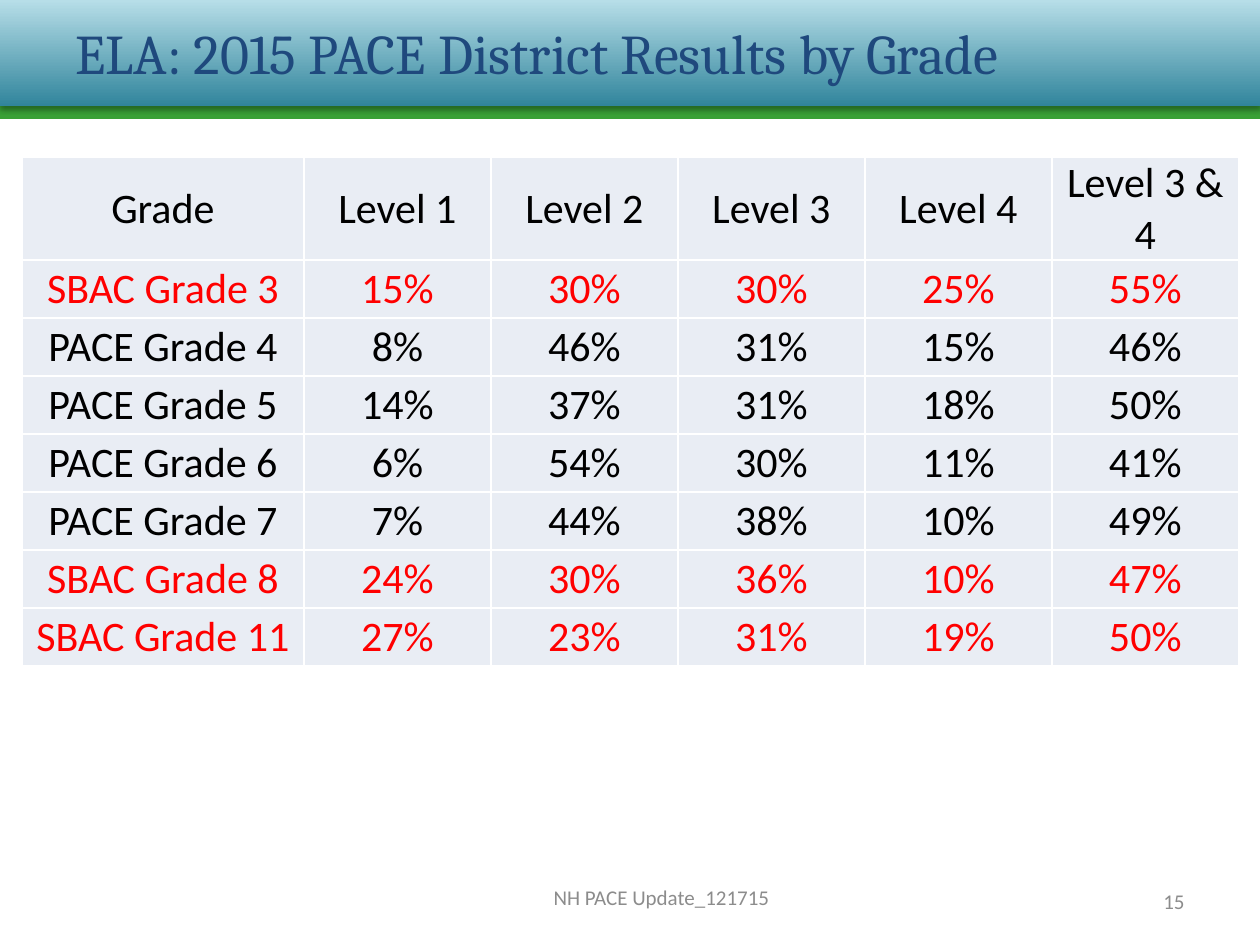
from lxml import etree
from pptx import Presentation
from pptx.dml.color import RGBColor
from pptx.enum.shapes import MSO_SHAPE
from pptx.enum.text import MSO_ANCHOR, PP_ALIGN
from pptx.oxml import parse_xml
from pptx.oxml.ns import nsdecls, qn
from pptx.util import Emu, Pt

RECTANGLE = MSO_SHAPE.RECTANGLE
MIDDLE = MSO_ANCHOR.MIDDLE
LEFT, CENTER, RIGHT = PP_ALIGN.LEFT, PP_ALIGN.CENTER, PP_ALIGN.RIGHT

GREEN = RGBColor(0x39, 0xA0, 0x36)
TEAL = RGBColor(0x31, 0x85, 0x9C)
PALE_TEAL = RGBColor(0xB7, 0xDE, 0xE8)
NAVY = RGBColor(0x1F, 0x49, 0x7D)
GREY = RGBColor(0x8C, 0x8C, 0x8C)
BLACK = RGBColor(0, 0, 0)
RED = RGBColor(0xFF, 0, 0)
WHITE = RGBColor(0xFF, 0xFF, 0xFF)
CELL_FILL = RGBColor(0xE9, 0xED, 0xF4)

TITLE = "ELA: 2015 PACE District Results by Grade"
FOOTER = "NH PACE Update_121715"
PAGE_NUMBER = "15"
HEADINGS = ("Grade", "Level 1", "Level 2", "Level 3", "Level 4", "Level 3 & 4")
RESULTS = [
    ("SBAC Grade 3", 15, 30, 30, 25, 55),
    ("PACE Grade 4", 8, 46, 31, 15, 46),
    ("PACE Grade 5", 14, 37, 31, 18, 50),
    ("PACE Grade 6", 6, 54, 30, 11, 41),
    ("PACE Grade 7", 7, 44, 38, 10, 49),
    ("SBAC Grade 8", 24, 30, 36, 10, 47),
    ("SBAC Grade 11", 27, 23, 31, 19, 50),
]

SLIDE_WIDTH, SLIDE_HEIGHT = 1260, 945
TABLE_LEFT, TABLE_TOP = 22, 157
GRADE_WIDTH, LEVEL_WIDTH = 282, 187
HEADING_HEIGHT, RESULT_HEIGHT = 103, 58


def px(count):
    return Emu(count * 7257)


def write(frame, text, size=24, font="Calibri", color=BLACK, align=CENTER):
    paragraph = frame.paragraphs[0]
    paragraph.alignment = align
    run = paragraph.add_run()
    run.text = text
    run.font.size = Pt(size)
    run.font.name = font
    run.font.color.rgb = color


def add_text(slide, box, text, **text_format):
    frame = slide.shapes.add_textbox(*map(px, box)).text_frame
    frame.word_wrap = True
    frame.vertical_anchor = MIDDLE
    write(frame, text, **text_format)


def add_band(slide, top, height):
    band = slide.shapes.add_shape(RECTANGLE, 0, px(top), px(SLIDE_WIDTH), px(height))
    band.shadow.inherit = False
    band.line.fill.background()
    return band


def add_header(slide):
    stripe = add_band(slide, 93, 26)
    stripe.fill.solid()
    stripe.fill.fore_color.rgb = GREEN

    banner = add_band(slide, 0, 106)
    banner.fill.gradient()
    banner.fill.gradient_angle = 90
    for stop, color in zip(banner.fill.gradient_stops, (TEAL, PALE_TEAL)):
        stop.color.rgb = color
    effects = banner._element.spPr.find(qn("a:effectLst"))
    shadow = etree.SubElement(effects, qn("a:outerShdw"), blurRad=str(Pt(3.1)),
                              dist=str(Pt(1.8)), dir="5400000", rotWithShape="0")
    shadow_color = etree.SubElement(shadow, qn("a:srgbClr"), val=str(BLACK))
    etree.SubElement(shadow_color, qn("a:alpha"), val="35000")


def format_cell(cell):
    cell.vertical_anchor = MIDDLE
    cell.margin_left = cell.margin_right = cell.margin_top = px(1)
    cell.margin_bottom = 0
    cell.fill.solid()
    cell.fill.fore_color.rgb = CELL_FILL
    properties = cell._tc.get_or_add_tcPr()
    for position, side in enumerate(("lnL", "lnR", "lnT", "lnB")):
        properties.insert(position, parse_xml(
            f'<a:{side} {nsdecls("a")} w="{Pt(1)}"><a:solidFill>'
            f'<a:srgbClr val="{WHITE}"/></a:solidFill></a:{side}>'))


def add_results(slide):
    rows = [HEADINGS] + [(grade, *(f"{share}%" for share in shares))
                         for grade, *shares in RESULTS]
    widths = [GRADE_WIDTH] + [LEVEL_WIDTH] * (len(HEADINGS) - 1)
    heights = [HEADING_HEIGHT] + [RESULT_HEIGHT] * len(RESULTS)
    box = (TABLE_LEFT, TABLE_TOP, sum(widths), sum(heights))
    table = slide.shapes.add_table(len(rows), len(widths), *map(px, box)).table
    table.first_row = table.horz_banding = False
    for column, width in zip(table.columns, widths):
        column.width = px(width)
    for row, height, texts in zip(table.rows, heights, rows):
        row.height = px(height)
        color = RED if texts[0].startswith("SBAC") else BLACK
        for cell, text in zip(row.cells, texts):
            format_cell(cell)
            write(cell.text_frame, text, color=color)


def main():
    deck = Presentation()
    deck.slide_width, deck.slide_height = px(SLIDE_WIDTH), px(SLIDE_HEIGHT)
    slide = deck.slides.add_slide(deck.slide_layouts[6])
    add_header(slide)
    add_text(slide, (63, 18, 1124, 68), TITLE,
             size=32, font="Cambria", color=NAVY, align=LEFT)
    add_text(slide, (1050, 876, 147, 50), PAGE_NUMBER,
             size=12, color=GREY, align=RIGHT)
    add_text(slide, (294, 872, 735, 50), FOOTER, size=12, color=GREY)
    add_results(slide)
    deck.save("out.pptx")


if __name__ == "__main__":
    main()
